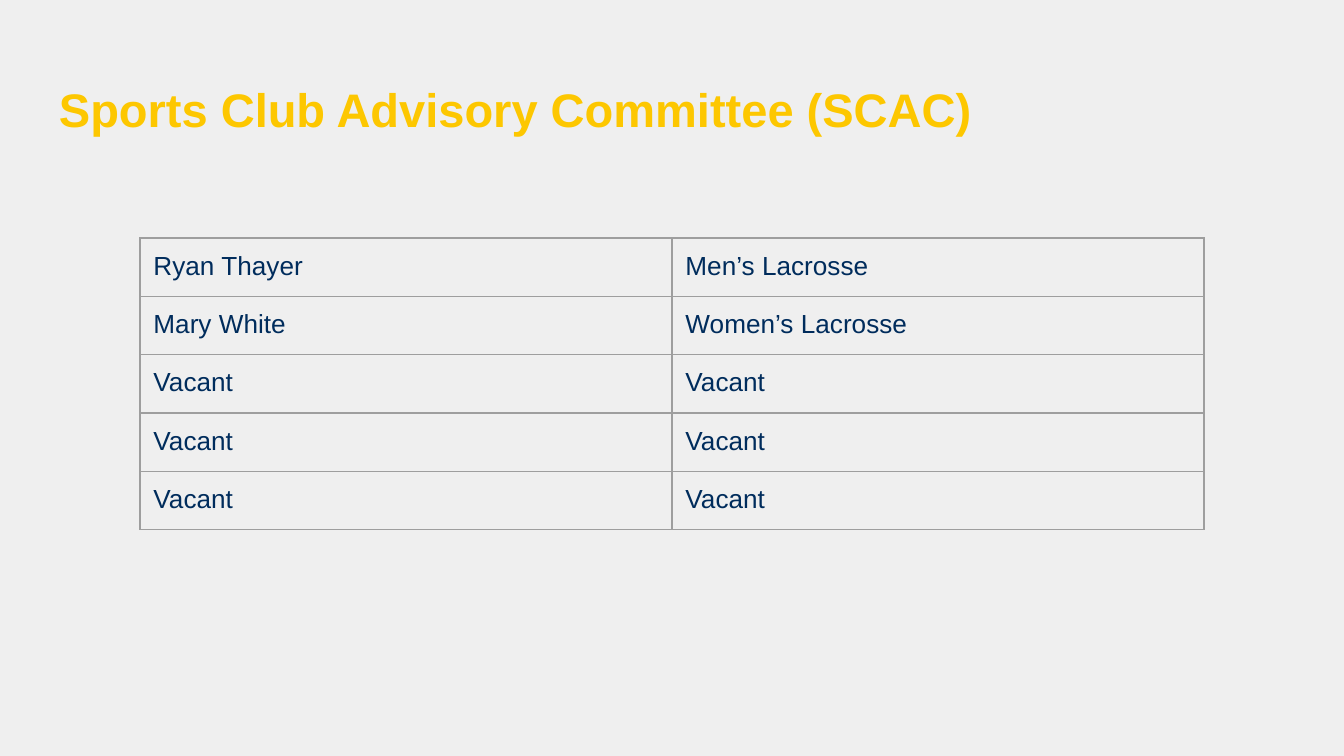
import dataclasses

import pptx
import pptx.dml.color
import pptx.enum.text
import pptx.oxml
import pptx.oxml.ns
import pptx.util

Pt = pptx.util.Pt
INSET = 7.2


@dataclasses.dataclass
class Member:
    name: str
    club: str


@dataclasses.dataclass
class Style:
    size: float
    color: str
    bold: bool = False


HEAD = Style(25.2, "FDC700", True)
BODY = Style(14, "002C5C")
MEMBERS = [
    Member("Ryan Thayer", "Men’s Lacrosse"),
    Member("Mary White", "Women’s Lacrosse"),
    *[Member("Vacant", "Vacant")] * 3,
]


def rgb(code: str) -> pptx.dml.color.RGBColor:
    return pptx.dml.color.RGBColor.from_string(code)


def write(box, text: str, style: Style) -> None:
    """Put styled text with even margins in a text frame or a cell."""
    for side in ("left", "right", "top", "bottom"):
        setattr(box, f"margin_{side}", Pt(INSET))
    box.text = text
    frame = getattr(box, "text_frame", box)
    font = frame.paragraphs[0].font
    font.name, font.size, font.bold = "Arial", Pt(style.size), style.bold
    font.color.rgb = rgb(style.color)


def border(cell, color: str, width: float) -> None:
    """Line all four sides; the lines must come before the fill."""
    props = cell._tc.get_or_add_tcPr()
    for spot, side in enumerate(("lnL", "lnR", "lnT", "lnB")):
        line = pptx.oxml.parse_xml(
            f'<a:{side} {pptx.oxml.ns.nsdecls("a")} w="{int(Pt(width))}">'
            f'<a:solidFill><a:srgbClr val="{color}"/></a:solidFill></a:{side}>'
        )
        props.insert(spot, line)


def add_title(slide, text: str) -> None:
    box = slide.shapes.add_textbox(Pt(24.5), Pt(35.3), Pt(671), Pt(45.4))
    frame = box.text_frame
    frame.word_wrap = True
    frame.vertical_anchor = pptx.enum.text.MSO_ANCHOR.BOTTOM
    write(frame, text, HEAD)


def add_roster(slide, members: list[Member]) -> None:
    wide, high = 285, 30
    table = slide.shapes.add_table(
        len(members), 2, Pt(75), Pt(127.5), Pt(2 * wide), Pt(high * len(members))
    ).table
    table.first_row = table.horz_banding = False
    for row, member in zip(table.rows, members):
        for cell, text in zip(row.cells, dataclasses.astuple(member)):
            write(cell, text, BODY)
            cell.fill.background()
            border(cell, "9E9E9E", 0.75)


def main() -> None:
    # Page
    deck = pptx.Presentation()
    deck.slide_width, deck.slide_height = Pt(720), Pt(405)
    slide = deck.slides.add_slide(deck.slide_layouts[6])
    fill = slide.background.fill
    fill.solid()
    fill.fore_color.rgb = rgb("EFEFEF")

    # Content
    add_title(slide, "Sports Club Advisory Committee (SCAC)")
    add_roster(slide, MEMBERS)
    deck.save("out.pptx")


if __name__ == "__main__":
    main()
